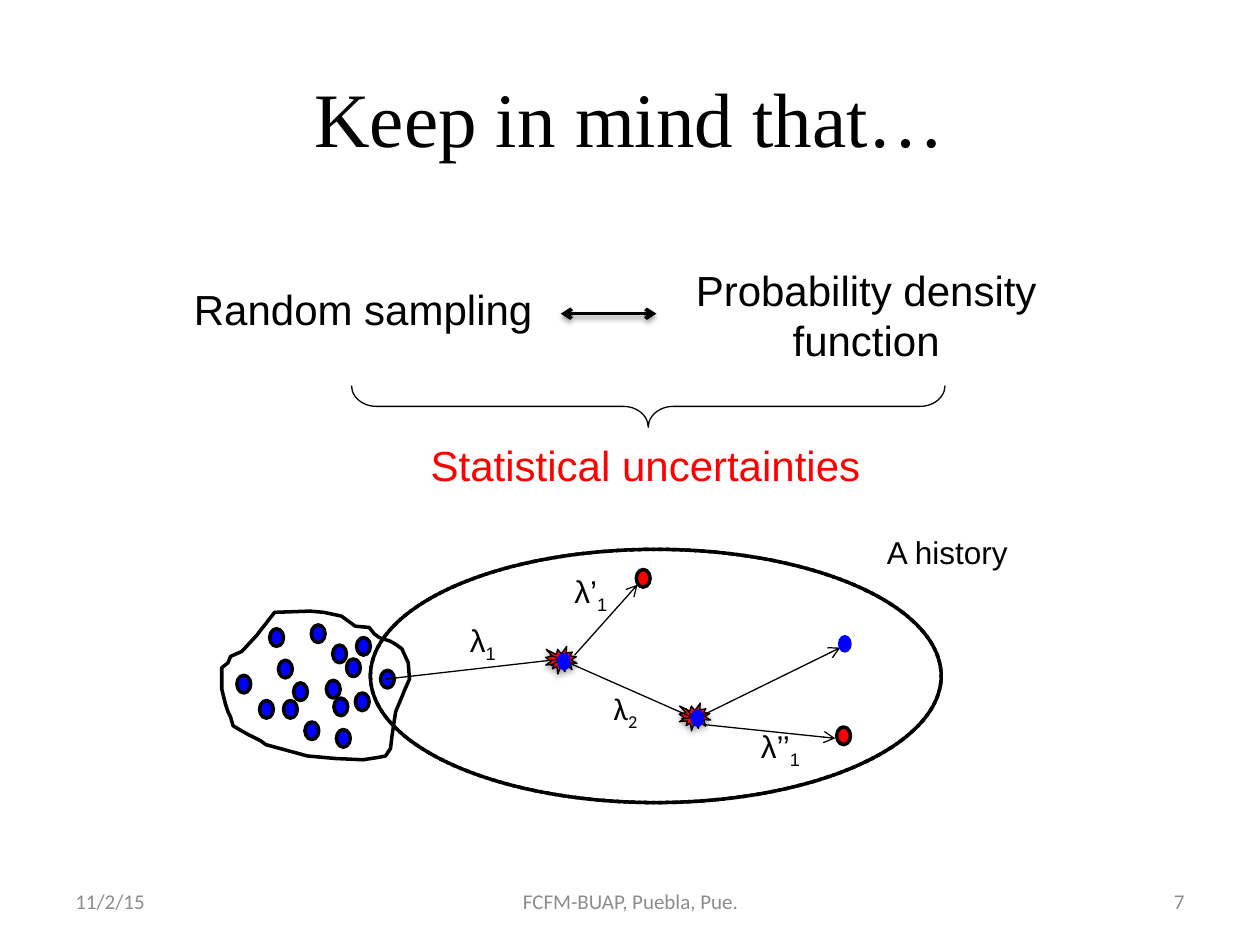
from lxml import etree
from pptx import Presentation, util as u
from pptx.dml.color import RGBColor
from pptx.enum import dml, shapes, text
from pptx.oxml import ns

COLUMNS, ROWS = 100, 75
DOT = (1.1, 1.4)
SEAL = (2.5, 2.2)
BLACK, RED, BLUE, GREY = "000000", "FF0000", "0000FF", "8C8C8C"
LEFT, CENTER, RIGHT = text.PP_ALIGN.LEFT, text.PP_ALIGN.CENTER, text.PP_ALIGN.RIGHT

OUTLINE = [
    (11.7, 1.3), (10.6, 1.2), (9.5, 0.4), (8.1, 0.1), (7, 0), (4.2, 0.1), (3.8, 0.6),
    (3.5, 1), (3.1, 1.5), (2.8, 1.9), (1.6, 3.2), (0.7, 3.6), (0.5, 4.1), (0, 4.5),
    (0, 6.2), (0.3, 7.4), (0.5, 8), (0.7, 8.4), (0.9, 9.1), (1.4, 9.4), (2.1, 9.8),
    (2.5, 10), (3.1, 10.3), (3.5, 10.6), (4.6, 10.9), (6.8, 11.5), (9, 11.7),
    (11.2, 11.8), (12.5, 11.6), (13, 11.5), (13.4, 10.9), (13.5, 10), (13.8, 8),
    (14.3, 6.8), (14.5, 6.3), (14.9, 5.4), (14.8, 4.1), (14.3, 3), (13.9, 2.7),
    (13.4, 2.4), (12.5, 2.1), (12.1, 1.8)]
PARTICLES = [
    (7.1, 1.1), (8.8, 2.7), (5.7, 5.7), (4.5, 3.9), (9.9, 3.8), (4.9, 7.1),
    (9.1, 9.4), (3.8, 1.4), (10.7, 2.1), (10.6, 6.5), (1.2, 5.1), (3, 7.1),
    (8.9, 6.9), (6.6, 8.8), (12.6, 4.7), (8.3, 5.5)]
FLIGHTS = [
    ((1.2, 10.3), (15.2, 8.7)), ((16.2, 8.4), (21.2, 2.8)), ((15.5, 8.9), (25.7, 13.4)),
    ((26.3, 13.2), (37.3, 7.8)), ((26.4, 13.9), (36.9, 15))]
PATH_LABELS = [
    ("λ", "1", "Arial", (6.9, 5.2), 4.2), ("λ", "2", "Calibri", (18.3, 10.6), 4.2),
    ("λ’", "1", "Arial", (15.2, 1.3), 4.8), ("λ’’", "1", "Arial", (30, 13.6), 5.3)]

deck = Presentation()
deck.slide_width, deck.slide_height = u.Inches(10), u.Inches(7.5)
page = deck.slides.add_slide(deck.slide_layouts[5])


def color(value):
    return RGBColor.from_string(value)


def place(box, at):
    """Turn a grid position inside a region into slide lengths."""
    return (round((box[0] + at[0]) * deck.slide_width / COLUMNS),
            round((box[1] + at[1]) * deck.slide_height / ROWS))


def set_effects(item, shadow_alpha=None):
    """Replace inherited effects with a soft shadow below, or with none."""
    properties = item._element.spPr
    effects = etree.SubElement(properties, ns.qn("a:effectLst"))
    if shadow_alpha:
        shadow = etree.SubElement(
            effects, ns.qn("a:outerShdw"), blurRad=str(u.Pt(3.1)),
            dist=str(u.Pt(1.8)), dir="5400000", rotWithShape="0")
        tone = etree.SubElement(shadow, ns.qn("a:srgbClr"), val=BLACK)
        etree.SubElement(tone, ns.qn("a:alpha"), val=str(shadow_alpha * 1000))


def style(shape, fill=None, width=None, shadow_alpha=None):
    if fill:
        shape.fill.solid()
        shape.fill.fore_color.rgb = color(fill)
    else:
        shape.fill.background()
    if width:
        shape.line.color.rgb = color(BLACK)
        shape.line.width = u.Pt(width)
    else:
        shape.line.fill.background()
    set_effects(shape, shadow_alpha)


def add_preset(kind, box, at, size, **look):
    shape = page.shapes.add_shape(kind, *place(box, at), *place((0, 0), size))
    style(shape, **look)
    return shape


def add_dot(box, at, fill, width=None):
    add_preset(shapes.MSO_SHAPE.OVAL, box, at, DOT, fill=fill, width=width)


def add_arrow(box, start, end, width, ends=("tailEnd",), shadow_alpha=None):
    arrow = page.shapes.add_connector(
        shapes.MSO_CONNECTOR.STRAIGHT, *place(box, start), *place(box, end))
    arrow.line.color.rgb = color(BLACK)
    arrow.line.width = u.Pt(width)
    for end_name in ends:
        etree.SubElement(arrow.line._ln, ns.qn("a:" + end_name), type="arrow")
    set_effects(arrow, shadow_alpha)


def format_span(span, size, ink, font):
    span.font.size, span.font.name = u.Pt(size), font
    span.font.color.rgb = color(ink)


def add_label(box, at, size, lines, points, ink=BLACK, font="Arial",
              align=LEFT, wrap=False, subscript=None):
    label = page.shapes.add_textbox(*place(box, at), *place((0, 0), size))
    frame = label.text_frame
    frame.text = lines
    frame.word_wrap = wrap
    if wrap:
        frame.vertical_anchor = text.MSO_ANCHOR.MIDDLE
    else:
        frame.auto_size = text.MSO_AUTO_SIZE.SHAPE_TO_FIT_TEXT
    if subscript:
        span = frame.paragraphs[0].add_run()
        span.text = subscript
        span._r.get_or_add_rPr().set("baseline", "-25000")
    for para in frame.paragraphs:
        para.alignment = align
        for span in para.runs:
            format_span(span, points, ink, font)


def add_title(box, size):
    title = page.shapes.title
    title.left, title.top = place(box, (0, 0))
    title.width, title.height = place((0, 0), size)
    title.text_frame.text = "Keep in mind that…"
    title.text_frame.vertical_anchor = text.MSO_ANCHOR.MIDDLE
    para = title.text_frame.paragraphs[0]
    para.alignment = CENTER
    format_span(para.runs[0], 44, BLACK, "Times New Roman")


def add_statement(box):
    """Sampling and density, braced together over their consequence."""
    add_label(box, (0, 1.5), (29.1, 5.1), "Random sampling", 24)
    add_label(box, (39.7, 0), (29.3, 9.1), "Probability density\nfunction", 24, align=CENTER)
    add_label(box, (18.8, 13.9), (36.5, 5.1), "Statistical uncertainties", 24, ink=RED)
    add_arrow(box, (30.1, 4.4), (37.7, 4.4), 2, ("headEnd", "tailEnd"), shadow_alpha=38)
    brace = add_preset(shapes.MSO_SHAPE.LEFT_BRACE, box, (35.4, -11.8), (3.3, 47.1), width=0.75)
    brace.adjustments[0], brace.adjustments[1] = 0.6, 0.5
    brace.rotation = 270


def add_particle_source(box):
    start, *others = [place(box, point) for point in OUTLINE]
    builder = page.shapes.build_freeform(*start)
    builder.add_line_segments(others, close=True)
    style(builder.convert_to_shape(), width=2)
    for at in PARTICLES:
        add_dot(box, at, BLUE, 2)


def add_history(box):
    """An oval holding one particle's flights and collisions."""
    oval = add_preset(shapes.MSO_SHAPE.DONUT, box, (0, 0), (45.3, 20.1), fill="FFFFFF", width=2)
    oval.adjustments[0] = 0
    oval.line.dash_style = dml.MSO_LINE.SQUARE_DOT
    collisions = [(13.9, 7.7), (24.5, 12.2)]
    for at in collisions:
        add_preset(shapes.MSO_SHAPE.EXPLOSION1, box, at, SEAL,
                   fill=RED, width=0.75, shadow_alpha=35)
    for start, end in FLIGHTS:
        add_arrow(box, start, end, 0.75)
    for left, top in collisions:
        add_dot(box, (left + 0.9, top + 0.5), BLUE)
    add_dot(box, (37.1, 6.8), BLUE)
    for at in [(21.1, 1.6), (37, 14.1)]:
        add_dot(box, at, RED, 2)
    for symbol, index, font, at, width in PATH_LABELS:
        add_label(box, at, (width, 4), symbol, 18, font=font, subscript=index)
    add_label(box, (40, -1.8), (11.8, 4), "A history", 18)


def add_footer(box):
    for words, left, width, align in [
            ("11/2/15", 0, 23.3, LEFT),
            ("FCFM-BUAP, Puebla, Pue.", 29.2, 31.7, CENTER),
            ("7", 66.7, 23.3, RIGHT)]:
        add_label(box, (left, 0), (width, 4), words, 12, GREY, "Calibri", align, wrap=True)


add_title((5, 3), (90, 12.5))
add_statement((14.4, 20.5))
add_particle_source((17.6, 48.5))
add_history((29.4, 43.6))
add_footer((5, 69.5))
deck.save("out.pptx")
